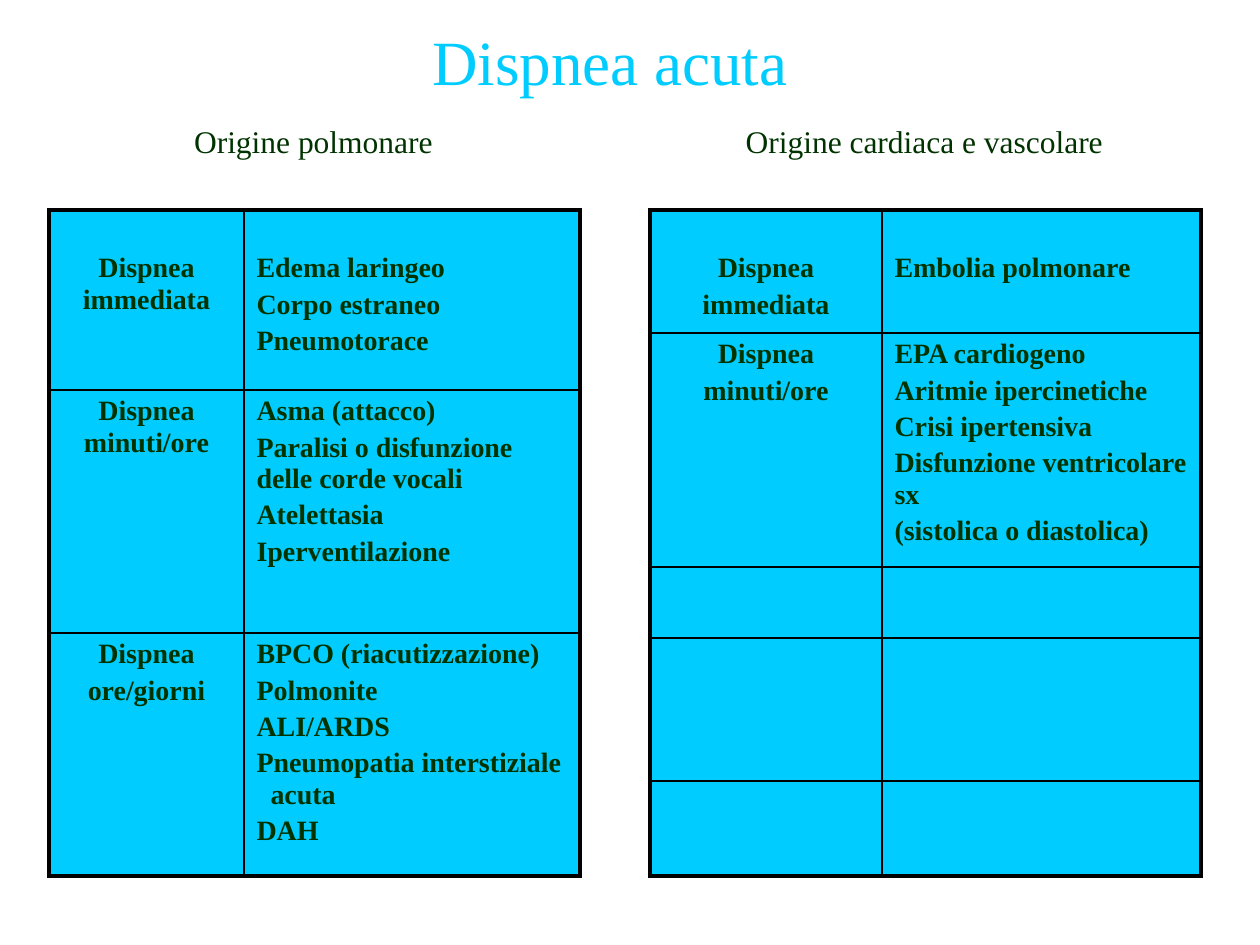
from dataclasses import dataclass

from lxml import etree
from pptx import Presentation
from pptx import util as u
from pptx.dml import color
from pptx.enum import text
from pptx.oxml import ns

SCALE = 914400 / 126


@dataclass(frozen=True)
class Theme:
    font: str = "Times New Roman"
    accent: str = "00CCFF"
    ink: str = "003300"
    border: str = "000000"
    title_size: int = 36
    heading_size: int = 18
    cell_size: int = 16
    paragraph_gap: int = 3
    outer_line: float = 2.25
    inner_line: float = 1


THEME = Theme()
CENTER = text.PP_ALIGN.CENTER
LEFT = text.PP_ALIGN.LEFT
CELL_TOP = 6
FIRST_ROW_TOP = 43
HANGING = 14

LUNG_ROWS = [
    (180, ["Dispnea immediata"],
     ["Edema laringeo", "Corpo estraneo", "Pneumotorace"]),
    (243, ["Dispnea minuti/ore"],
     ["Asma (attacco)", "Paralisi o disfunzione delle corde vocali",
      "Atelettasia", "Iperventilazione"]),
    (243, ["Dispnea", "ore/giorni"],
     ["BPCO (riacutizzazione)", "Polmonite", "ALI/ARDS",
      "Pneumopatia interstiziale acuta", "DAH"]),
]
HEART_ROWS = [
    (123, ["Dispnea", "immediata"], ["Embolia polmonare"]),
    (234, ["Dispnea", "minuti/ore"],
     ["EPA cardiogeno", "Aritmie ipercinetiche", "Crisi ipertensiva",
      "Disfunzione ventricolare sx", "(sistolica o diastolica)"]),
    (71, [], []),
    (143, [], []),
    (95, [], []),
]


def px(length):
    return u.Emu(round(length * SCALE))


def add_span(para, words, size, tint, bold=False):
    span = para.add_run()
    span.text = words
    span.font.name = THEME.font
    span.font.size = u.Pt(size)
    span.font.bold = bold
    span.font.color.rgb = color.RGBColor.from_string(tint)


def add_label(page, bounds, words, size, tint):
    box = page.shapes.add_textbox(*map(px, bounds))
    box.text_frame.word_wrap = True
    para = box.text_frame.paragraphs[0]
    para.alignment = CENTER
    add_span(para, words, size, tint)


def set_border(cell, side, width):
    properties = cell._tc.get_or_add_tcPr()
    line = etree.SubElement(properties, ns.qn(f"a:ln{side}"), w=str(u.Pt(width)))
    fill = etree.SubElement(line, ns.qn("a:solidFill"))
    etree.SubElement(fill, ns.qn("a:srgbClr"), val=THEME.border)


def style_cell(cell, outer_sides):
    for side in "LRTB":
        width = THEME.outer_line if side in outer_sides else THEME.inner_line
        set_border(cell, side, width)
    cell.fill.solid()
    cell.fill.fore_color.rgb = color.RGBColor.from_string(THEME.accent)


def fill_cell(cell, lines, alignment, top):
    cell.margin_top = px(top)
    frame = cell.text_frame
    for index, words in enumerate(lines):
        para = frame.add_paragraph() if index else frame.paragraphs[0]
        para.alignment = alignment
        para.space_before = u.Pt(THEME.paragraph_gap if index else 0)
        add_span(para, words, THEME.cell_size, THEME.ink, bold=True)


def hang_wrapped_line(para):
    properties = para._p.get_or_add_pPr()
    properties.set("marL", str(px(HANGING)))
    properties.set("indent", str(-px(HANGING)))


def add_onset_table(page, left, top, widths, rows):
    height = sum(row[0] for row in rows)
    frame = page.shapes.add_table(
        len(rows), len(widths), px(left), px(top), px(sum(widths)), px(height))
    table = frame.table
    table.first_row = table.horz_banding = False
    for column, width in zip(table.columns, widths):
        column.width = px(width)
    for index, (row_height, onset, causes) in enumerate(rows):
        table.rows[index].height = px(row_height)
        edges = ("T" if index == 0 else "") + ("B" if index == len(rows) - 1 else "")
        cell_top = CELL_TOP if index else FIRST_ROW_TOP
        columns = (("L", onset, CENTER), ("R", causes, LEFT))
        for number, (side, lines, alignment) in enumerate(columns):
            cell = table.cell(index, number)
            style_cell(cell, edges + side)
            fill_cell(cell, lines, alignment, cell_top)
    return table


def main():
    deck = Presentation()
    deck.slide_width, deck.slide_height = px(1260), px(945)
    page = deck.slides.add_slide(deck.slide_layouts[6])
    lung = add_onset_table(page, 49, 210, (195, 336), LUNG_ROWS)
    hang_wrapped_line(lung.cell(2, 1).text_frame.paragraphs[3])
    add_onset_table(page, 650, 210, (232, 319), HEART_ROWS)
    add_label(page, (113, 116, 401, 50), "Origine polmonare",
              THEME.heading_size, THEME.ink)
    add_label(page, (723, 116, 403, 50), "Origine cardiaca e vascolare",
              THEME.heading_size, THEME.ink)
    add_label(page, (94, 16, 1032, 88), "Dispnea acuta",
              THEME.title_size, THEME.accent)
    deck.save("out.pptx")


if __name__ == "__main__":
    main()
